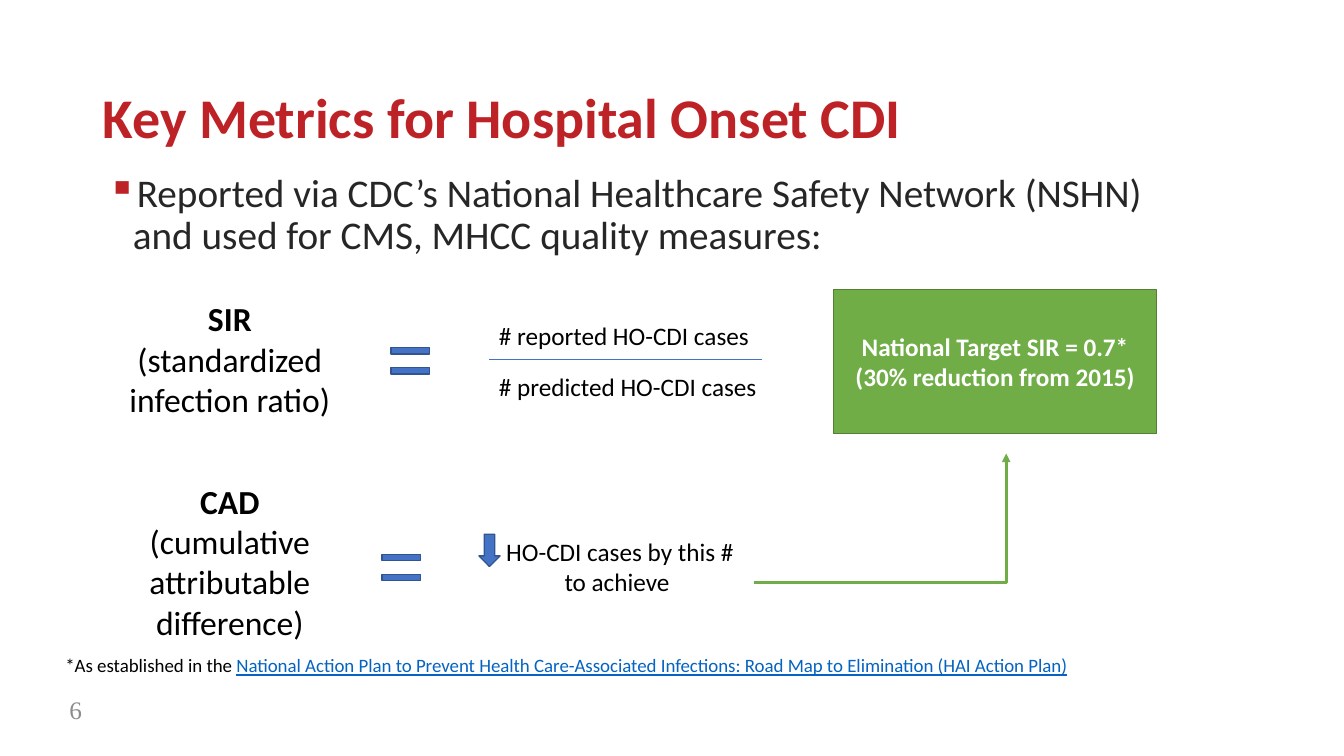
"""Build the slide on key metrics for hospital onset CDI."""
from dataclasses import dataclass

from lxml.etree import SubElement
from pptx import Presentation
from pptx.dml.color import RGBColor
from pptx.enum.shapes import MSO_CONNECTOR, MSO_SHAPE
from pptx.enum.text import MSO_ANCHOR, PP_ALIGN
from pptx.oxml.ns import qn
from pptx.util import Inches, Pt


@dataclass(frozen=True)
class Theme:
    red: str = "BD2226"
    charcoal: str = "262626"
    grey: str = "8C8C8C"
    black: str = "000000"
    white: str = "FFFFFF"
    blue: str = "4472C4"
    dark_blue: str = "325491"
    link_blue: str = "0563C1"
    green: str = "70AD47"
    dark_green: str = "538035"
    font: str = "Calibri"
    number_font: str = "Times New Roman"
    title_size: float = 40
    body_size: float = 28
    term_size: float = 24
    label_size: float = 18
    note_size: float = 13.5


THEME = Theme()


def set_attributes(target, values):
    for name, value in values.items():
        setattr(target, name, value)


def place(shape, left, top, width, height):
    set_attributes(shape, {
        "left": Inches(left), "top": Inches(top),
        "width": Inches(width), "height": Inches(height),
    })


def write(shape, paragraphs, size, color=THEME.black, font=THEME.font,
          align=PP_ALIGN.LEFT, anchor=MSO_ANCHOR.TOP, spacing=None):
    """Fill a shape with paragraphs, each a list of (text, font values) runs."""
    frame = shape.text_frame
    set_attributes(frame, {"word_wrap": True, "vertical_anchor": anchor})
    for index, runs in enumerate(paragraphs):
        paragraph = frame.add_paragraph() if index else frame.paragraphs[0]
        set_attributes(paragraph, {"alignment": align, "line_spacing": spacing})
        for text, values in runs:
            run = paragraph.add_run()
            run.text = text
            values = {"name": font, "size": Pt(size), "bold": False, **values}
            run_color = values.pop("color", color)
            set_attributes(run.font, values)
            run.font.color.rgb = RGBColor.from_string(run_color)


def add_text(slide, box, paragraphs, size, **options):
    shape = slide.shapes.add_textbox(*map(Inches, box))
    write(shape, paragraphs, size, **options)
    return shape


def add_bullet(paragraph, symbol, color, indent):
    properties = paragraph._p.get_or_add_pPr()
    properties.set("marL", str(Inches(indent)))
    properties.set("indent", str(-Inches(indent)))
    bullet_color = SubElement(properties, qn("a:buClr"))
    SubElement(bullet_color, qn("a:srgbClr"), val=color)
    SubElement(properties, qn("a:buChar"), char=symbol)


def add_filled_shape(slide, kind, box, fill, outline):
    shape = slide.shapes.add_shape(kind, *map(Inches, box))
    shape.shadow.inherit = False
    shape.fill.solid()
    shape.fill.fore_color.rgb = RGBColor.from_string(fill)
    shape.line.color.rgb = RGBColor.from_string(outline)
    shape.line.width = Pt(1)
    return shape


def add_line(slide, kind, start, end, color, width):
    line = slide.shapes.add_connector(kind, *map(Inches, start + end))
    line.line.color.rgb = RGBColor.from_string(color)
    line.line.width = Pt(width)
    SubElement(line._element.spPr, qn("a:effectLst"))
    return line


def add_elbow_arrow(slide, start, end, color, width):
    arrow = add_line(slide, MSO_CONNECTOR.ELBOW, start, end, color, width)
    adjustments = arrow._element.spPr.find(qn("a:prstGeom")).get_or_add_avLst()
    SubElement(adjustments, qn("a:gd"), name="adj1", fmla="val 100000")
    SubElement(arrow.line._get_or_add_ln(), qn("a:tailEnd"), type="triangle")


def add_term(slide, box, paragraphs):
    add_text(slide, box, paragraphs, THEME.term_size, align=PP_ALIGN.CENTER)


def add_equals(slide, left, top):
    add_filled_shape(slide, MSO_SHAPE.MATH_EQUAL, (left, top, 0.52, 0.26),
                     THEME.blue, THEME.dark_blue).adjustments[1] = 0.53


def add_heading(slide):
    title = slide.shapes.title
    place(title, 0.92, 0.65, 11.5, 1.09)
    write(title, [[("Key Metrics for Hospital Onset CDI", {"bold": True})]],
          THEME.title_size, THEME.red, anchor=MSO_ANCHOR.MIDDLE, spacing=0.9)
    body = add_text(slide, (0.97, 1.67, 11.01, 1.04), [[(
        "Reported via CDC’s National Healthcare Safety Network (NSHN) "
        "and used for CMS, MHCC quality measures:", {})]],
        THEME.body_size, color=THEME.charcoal, spacing=0.9)
    add_bullet(body.text_frame.paragraphs[0], "▪", THEME.red, 0.25)


def add_ratio(slide):
    add_term(slide, (1.06, 2.91, 2.44, 1.31), [
        [("SIR", {"bold": True}), (" (standardized infection ratio)", {})]])
    add_equals(slide, 3.81, 3.45)
    for top, kind in ((3.13, "reported"), (3.63, "predicted")):
        add_text(slide, (4.85, top, 2.9, 0.4),
                 [[(f"# {kind} HO-CDI cases", {})]], THEME.label_size)
    add_line(slide, MSO_CONNECTOR.STRAIGHT, (4.85, 3.57), (7.56, 3.57),
             THEME.blue, 0.5)


def add_target(slide):
    target = add_filled_shape(slide, MSO_SHAPE.RECTANGLE,
                              (8.27, 2.87, 3.2, 1.43),
                              THEME.green, THEME.dark_green)
    lines = ("National Target SIR = 0.7*", "(30% reduction from 2015)")
    write(target, [[(line, {"bold": True})] for line in lines],
          THEME.label_size, THEME.white, align=PP_ALIGN.CENTER,
          anchor=MSO_ANCHOR.MIDDLE)


def add_difference(slide):
    add_term(slide, (1.06, 4.72, 2.44, 1.72), [
        [("CAD", {"bold": True})],
        [("(cumulative attributable difference)", {})]])
    add_equals(slide, 3.72, 5.5)
    add_text(slide, (4.76, 5.27, 2.72, 0.71),
             [[(" HO-CDI cases by this # to achieve", {})]],
             THEME.label_size, align=PP_ALIGN.CENTER)
    add_elbow_arrow(slide, (7.48, 5.78), (9.98, 4.5), THEME.green, 2)
    add_filled_shape(slide, MSO_SHAPE.DOWN_ARROW, (4.75, 5.3, 0.21, 0.32),
                     THEME.blue, THEME.dark_blue)


def add_footer(slide):
    add_text(slide, (0.55, 6.44, 10.74, 0.33), [[
        ("*As established in the ", {}),
        ("National Action Plan to Prevent Health Care-Associated Infections: "
         "Road Map to Elimination (HAI Action Plan)",
         {"underline": True, "color": THEME.link_blue})]], THEME.note_size)
    add_text(slide, (0.59, 6.84, 0.59, 0.4), [[("6", {})]], THEME.label_size,
             color=THEME.grey, font=THEME.number_font, anchor=MSO_ANCHOR.MIDDLE)


def main():
    presentation = Presentation()
    set_attributes(presentation, {"slide_width": Inches(13.33),
                                  "slide_height": Inches(7.5)})
    slide = presentation.slides.add_slide(presentation.slide_layouts[5])
    for add_part in (add_heading, add_ratio, add_target, add_difference,
                     add_footer):
        add_part(slide)
    presentation.save("out.pptx")


if __name__ == "__main__":
    main()
